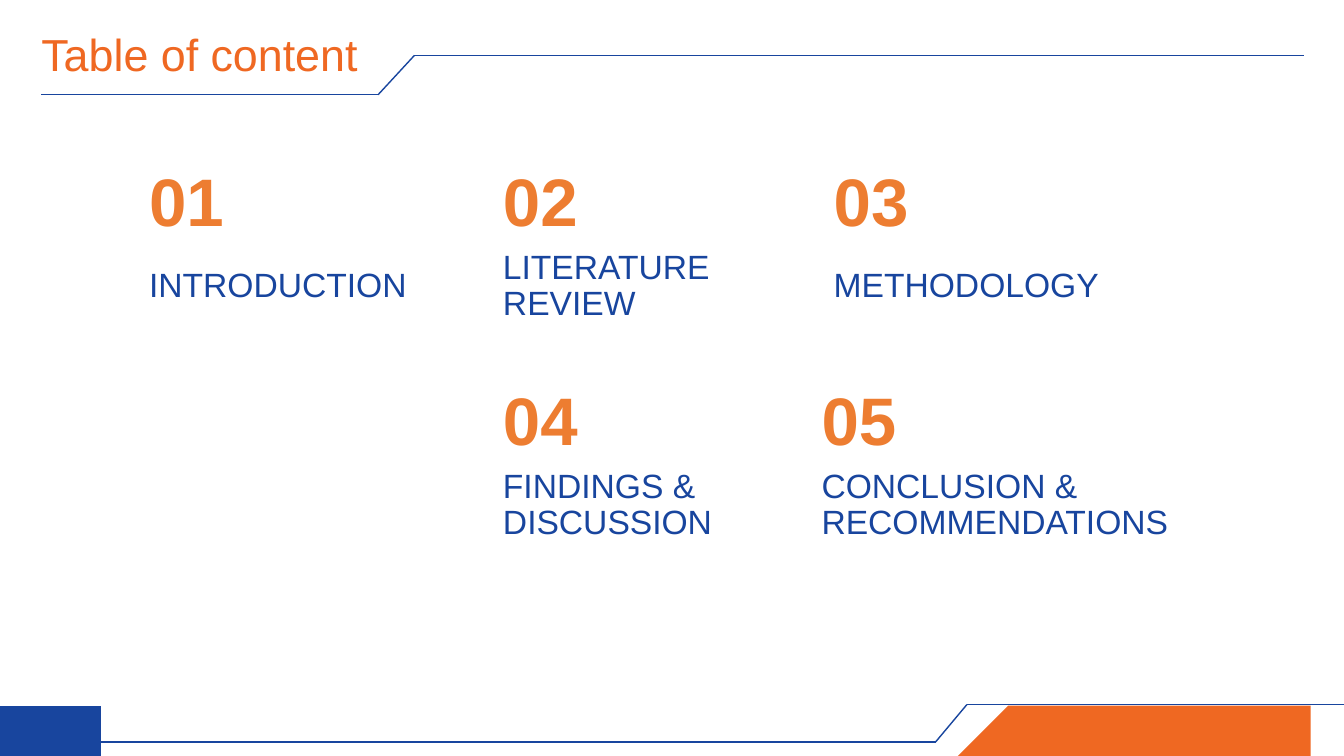
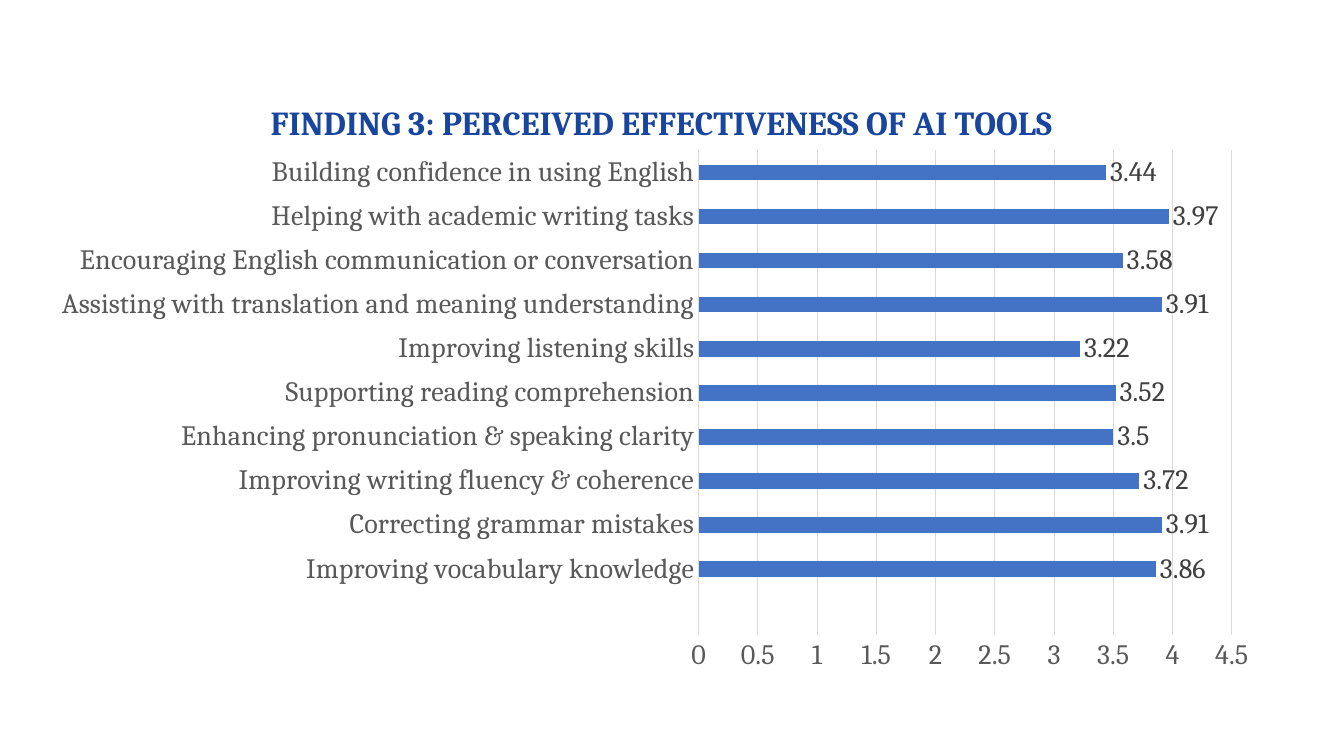
from lxml import etree
from pptx import Presentation
from pptx import util as u
from pptx.chart import data
from pptx.dml import color
from pptx.enum import chart as charts, shapes, text

WIDTH, HEIGHT = 13.33, 7.5
BLUE, ORANGE, NUMBER = "18459E", "EF6822", "ED7D31"
BAR, GRID, AXIS_TEXT, LABEL_TEXT = "4472C4", "D9D9D9", "595959", "404040"
SANS, SERIF = "Arial", "Cambria"

COLUMNS = (1.38, 4.89, 8.17)
ROWS = (1.77, 3.94)
LABEL_DROP, LINE_HEIGHT = 0.81, 0.53
LABEL_WIDTH, NUMBER_WIDTH = 3.38, 1.08
LAST_COLUMN, LAST_WIDTH = 8.05, 3.77

TOPICS = (
    ("INTRODUCTION", COLUMNS[0], ROWS[0], LABEL_WIDTH),
    ("LITERATURE REVIEW", COLUMNS[1], ROWS[0], LABEL_WIDTH),
    ("METHODOLOGY", COLUMNS[2], ROWS[0], LABEL_WIDTH),
    ("FINDINGS & DISCUSSION", COLUMNS[1], ROWS[1], LABEL_WIDTH),
    ("CONCLUSION & RECOMMENDATIONS", LAST_COLUMN, ROWS[1], LAST_WIDTH),
)
TITLE_LINE = ((0.41, 0.94), (3.75, 0.94), (4.11, 0.55), (12.93, 0.55))
FOOTER_LINE = ((0, 7.36), (9.28, 7.36), (9.59, 6.99), (WIDTH, 6.99))
LEFT_BAND = ((0, 7.23), (1.09, 7.23), (1.32, HEIGHT), (0, HEIGHT))
RIGHT_BAND = ((9.65, 7.11), (WIDTH, 7.11), (WIDTH, HEIGHT), (9.33, HEIGHT))

RATINGS = (
    ("", None),
    ("Improving vocabulary knowledge", 3.86),
    ("Correcting grammar mistakes", 3.91),
    ("Improving writing fluency & coherence", 3.72),
    ("Enhancing pronunciation & speaking clarity", 3.5),
    ("Supporting reading comprehension", 3.52),
    ("Improving listening skills", 3.22),
    ("Assisting with translation and meaning understanding", 3.91),
    ("Encouraging English communication or conversation", 3.58),
    ("Helping with academic writing tasks", 3.97),
    ("Building confidence in using English", 3.44),
)


def rgb(value):
    """Turn a hex string into a colour."""
    return color.RGBColor.from_string(value)


def inches(*lengths):
    """Convert lengths in inches to slide units."""
    return [u.Inches(length) for length in lengths]


def style_font(font, size, hue, name, bold=False):
    """Set size, colour, face and weight of a font."""
    font.size, font.name, font.bold = u.Pt(size), name, bold
    font.color.rgb = rgb(hue)


def style_line(line, hue, width):
    """Give a line a colour and a width in points."""
    line.color.rgb = rgb(hue)
    line.width = u.Pt(width)


def write(box, words, *, size, hue, name=SANS, bold=False):
    """Fill a box with one left-aligned, vertically centred paragraph."""
    frame = box.text_frame
    frame.word_wrap = True
    frame.auto_size = text.MSO_AUTO_SIZE.NONE
    frame.vertical_anchor = text.MSO_ANCHOR.MIDDLE
    para = frame.paragraphs[0]
    para.alignment = text.PP_ALIGN.LEFT
    para.line_spacing = 0.9
    span = para.add_run()
    span.text = words
    style_font(span.font, size, hue, name, bold)


def add_text(page, words, place, **style):
    """Add a formatted text box."""
    write(page.shapes.add_textbox(*inches(*place)), words, **style)


def add_title(page, words):
    """Place and fill the title placeholder."""
    title = page.shapes.title
    title.left, title.top, title.width, title.height = inches(0.31, 0.39, 3.38, 0.35)
    write(title, words, size=32, hue=ORANGE)


def add_polyline(page, points):
    """Join successive points with thin straight connectors."""
    for start, end in zip(points, points[1:]):
        line = page.shapes.add_connector(
            shapes.MSO_CONNECTOR.STRAIGHT, *inches(*start, *end))
        style_line(line.line, BLUE, 1)
        etree.SubElement(line._element.spPr, "{%s}effectLst" % line._element.nsmap["a"])


def add_band(page, points, hue):
    """Add a filled outline through the points."""
    builder = page.shapes.build_freeform(*points[0], scale=u.Inches(1))
    builder.add_line_segments(points[1:], close=True)
    band = builder.convert_to_shape()
    band.shadow.inherit = False
    band.fill.solid()
    band.fill.fore_color.rgb = rgb(hue)
    band.line.fill.background()


def add_topic(page, number, label, left, top, width):
    """Add a large number with its topic below."""
    add_text(page, f"{number:02}", (left, top, NUMBER_WIDTH, LINE_HEIGHT),
             size=48, hue=NUMBER, bold=True)
    add_text(page, label, (left, top + LABEL_DROP, width, LINE_HEIGHT),
             size=24, hue=BLUE)


def set_layout(parent, index, **shares):
    """Fix a chart part at shares of the chart's size."""
    space = "{%s}" % parent.nsmap["c"]
    for old in parent.findall(space + "layout"):
        parent.remove(old)
    layout = etree.Element(space + "layout")
    manual = etree.SubElement(layout, space + "manualLayout")
    if "w" in shares:
        etree.SubElement(manual, space + "layoutTarget", val="inner")
    for mode in ("xMode", "yMode"):
        etree.SubElement(manual, space + mode, val="edge")
    for key, share in shares.items():
        etree.SubElement(manual, space + key, val=str(share))
    parent.insert(index, layout)


def style_axis(axis):
    """Remove tick marks and format the axis labels."""
    axis.major_tick_mark = axis.minor_tick_mark = charts.XL_TICK_MARK.NONE
    style_font(axis.tick_labels.font, 20, AXIS_TEXT, SERIF)


def style_chart_axes(chart):
    """Format the category axis, the value axis and the gridlines."""
    category, value = chart.category_axis, chart.value_axis
    style_axis(category)
    style_axis(value)
    style_line(category.format.line, GRID, 0.75)
    value.format.line.fill.background()
    value.minimum_scale, value.maximum_scale, value.major_unit = 0, 4.5, 0.5
    value.has_major_gridlines = True
    style_line(value.major_gridlines.format.line, GRID, 0.75)


def style_bars(plot):
    """Format the bars and their value labels."""
    plot.gap_width = 182
    plot.vary_by_categories = False
    series = plot.series[0]
    series.format.fill.solid()
    series.format.fill.fore_color.rgb = rgb(BAR)
    labels = series.data_labels
    labels.show_value = True
    labels.position = charts.XL_LABEL_POSITION.OUTSIDE_END
    style_font(labels.font, 20, LABEL_TEXT, SERIF)


def add_bar_chart(page, title, ratings, place):
    """Add a titled bar chart of the ratings."""
    names, values = zip(*ratings)
    table = data.CategoryChartData()
    table.categories = names
    table.add_series("Series 1", values)
    chart = page.shapes.add_chart(
        charts.XL_CHART_TYPE.BAR_CLUSTERED, *inches(*place), table).chart
    style_font(chart.font, 20, "000000", SERIF)
    chart.has_legend = False
    span = chart.chart_title.text_frame.paragraphs[0].add_run()
    span.text = title
    style_font(span.font, 24, BLUE, SERIF, bold=True)
    chart.chart_title.include_in_layout = False
    style_chart_axes(chart)
    style_bars(chart.plots[0])
    root = chart._chartSpace.chart
    set_layout(root.plotArea, 0, x=0.53, y=0.13, w=0.43, h=0.79)
    set_layout(root.title, 1, x=0.18, y=0.04)


def build_contents(deck):
    """Build the table of contents."""
    page = deck.slides.add_slide(deck.slide_layouts[5])
    add_title(page, "Table of content")
    for number, topic in enumerate(TOPICS, 1):
        add_topic(page, number, *topic)
    add_polyline(page, TITLE_LINE)
    add_band(page, LEFT_BAND, BLUE)
    add_polyline(page, FOOTER_LINE)
    add_band(page, RIGHT_BAND, ORANGE)


def build_finding(deck):
    """Build the chart of perceived effectiveness."""
    page = deck.slides.add_slide(deck.slide_layouts[6])
    add_bar_chart(page, "FINDING 3: PERCEIVED EFFECTIVENESS OF AI TOOLS",
                  RATINGS, (0.41, 0.7, 12.3, 6.09))


def main():
    """Build and save the deck."""
    deck = Presentation()
    deck.slide_width, deck.slide_height = inches(WIDTH, HEIGHT)
    build_contents(deck)
    build_finding(deck)
    deck.save("out.pptx")


if __name__ == "__main__":
    main()
